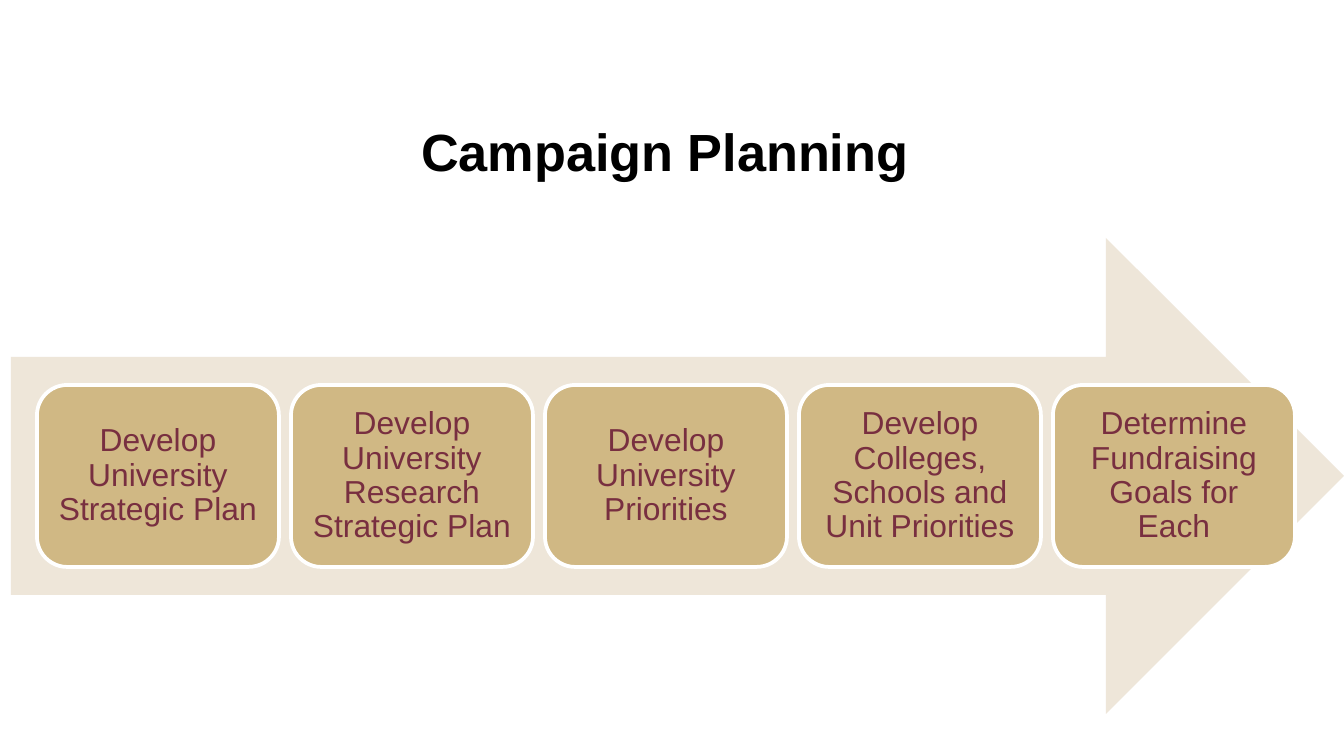
from pptx import Presentation
from pptx.dml.color import RGBColor
from pptx.enum.shapes import MSO_SHAPE as Shape
from pptx.enum.text import MSO_ANCHOR as Anchor, PP_ALIGN as Align
from pptx.util import Pt

# Content
TITLE = "Campaign Planning "
STEPS = [
    "Develop University Strategic Plan",
    "Develop University Research Strategic Plan",
    "Develop University Priorities",
    "Develop Colleges, Schools and Unit Priorities",
    "Determine Fundraising Goals for Each",
]
COLORS = {"title": "000000", "arrow": "EEE6D9", "box": "D0B884",
          "line": "FFFFFF", "text": "782F40"}

# Layout in px
WIDTH, HEIGHT = 1344, 756
LEFT, TOP, BOX_W, BOX_H, GAP = 37, 385, 242, 182, 12
INSET = 10


def px(n):
    return round(n * 914400 / 134.4)


def color(name):
    return RGBColor.from_string(COLORS[name])


def write(frame, text, size, name, bold=False):
    frame.word_wrap = True
    para = frame.paragraphs[0]
    para.text = text
    para.alignment = Align.CENTER
    font = para.font
    font.name, font.size, font.bold = "Arial", Pt(size), bold
    font.color.rgb = color(name)
    return para


def add_shape(kind, area, fill):
    shape = slide.shapes.add_shape(kind, *map(px, area))
    shape.shadow.inherit = False
    shape.fill.solid()
    shape.fill.fore_color.rgb = color(fill)
    return shape


deck = Presentation()
deck.slide_width, deck.slide_height = px(WIDTH), px(HEIGHT)
slide = deck.slides.add_slide(deck.slide_layouts[6])

# Title
title = slide.shapes.add_textbox(*map(px, (336, 113, 672, 77)))
write(title.text_frame, TITLE, 28, "title", bold=True)

# Arrow behind the steps
arrow = add_shape(Shape.RIGHT_ARROW, (11, 238, 1333, 476), "arrow")
arrow.line.fill.background()

# Step boxes
for i, step in enumerate(STEPS):
    left = LEFT + i * (BOX_W + GAP)
    box = add_shape(Shape.ROUNDED_RECTANGLE, (left, TOP, BOX_W, BOX_H), "box")
    box.line.color.rgb = color("line")
    box.line.width = Pt(2)
    frame = box.text_frame
    frame.vertical_anchor = Anchor.MIDDLE
    frame.margin_left = frame.margin_right = px(INSET)
    frame.margin_top = frame.margin_bottom = px(INSET)
    write(frame, step, 17, "text").line_spacing = 0.9

deck.save("out.pptx")
